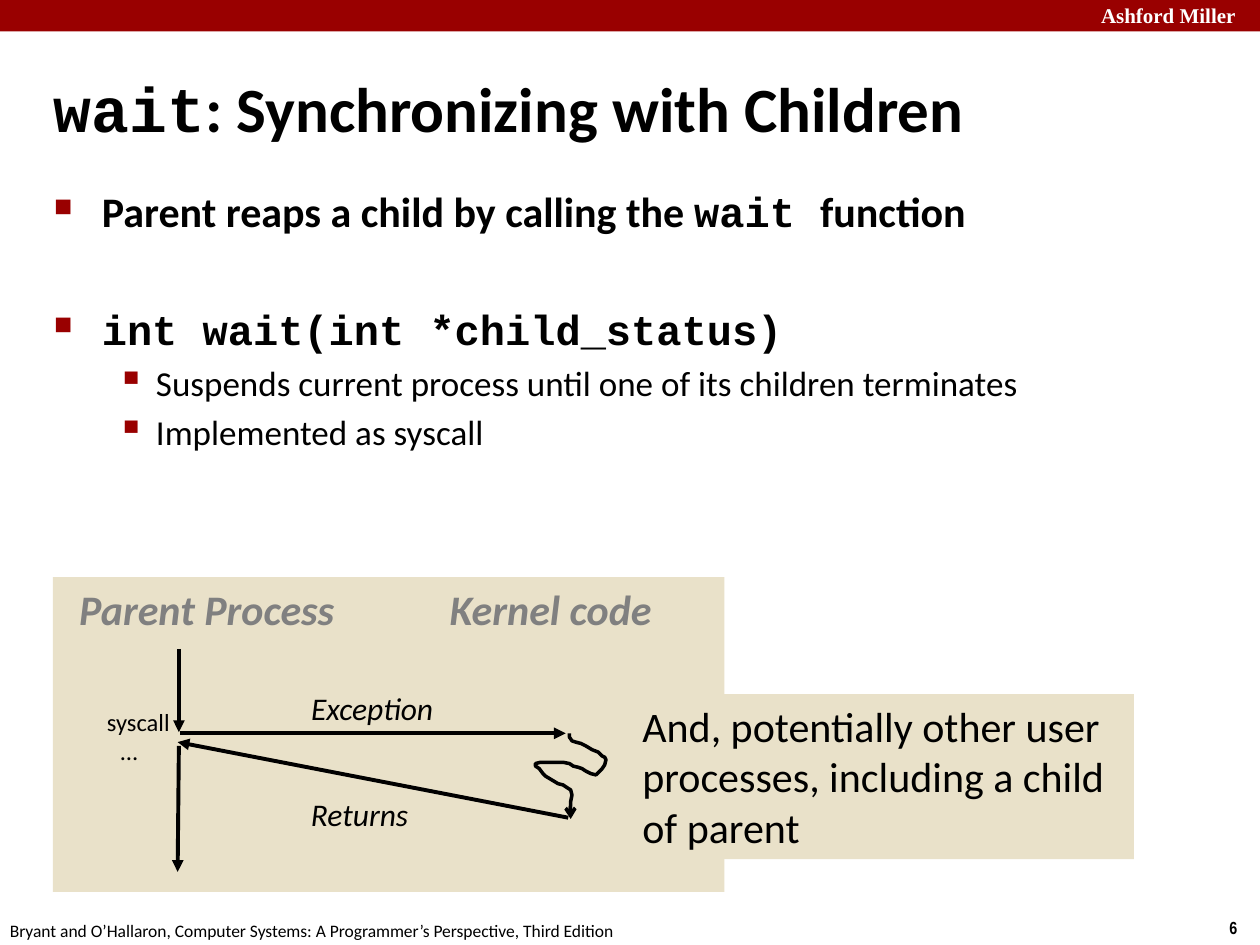
"""Build a slide on how wait synchronizes a parent process with its children."""
from dataclasses import dataclass, field

from lxml.etree import SubElement
from pptx import Presentation
from pptx.dml.color import RGBColor
from pptx.enum.shapes import MSO_CONNECTOR as Connector, MSO_SHAPE as Preset
from pptx.enum.text import MSO_ANCHOR as Anchor, PP_ALIGN as Align
from pptx.oxml.ns import qn
from pptx.util import Inches, Pt

BLACK = RGBColor(0x00, 0x00, 0x00)
WHITE = RGBColor(0xFF, 0xFF, 0xFF)
GRAY = RGBColor(0x80, 0x80, 0x80)
RED = RGBColor(0x99, 0x00, 0x00)
SAND = RGBColor(0xE9, 0xE1, 0xC9)

SANS, CODE = "Calibri", "Courier New"
TITLE = {"name": SANS, "size": Pt(36), "bold": True}
POINT = {"name": SANS, "size": Pt(24), "bold": True}
DETAIL = {"name": SANS, "size": Pt(20), "bold": False}
HEADING = {**POINT, "italic": True}
NOTE = {"name": SANS, "size": Pt(24)}
LABEL = {"name": SANS, "size": Pt(18), "italic": True}
STEP = {"name": SANS, "size": Pt(14)}
FOOTER = {"name": SANS, "size": Pt(10)}
PAGE_NUMBER = {"name": "Arial Narrow", "size": Pt(10), "bold": True}
SCHOOL = {"name": "Times New Roman", "size": Pt(12), "bold": True}


@dataclass
class Span:
    text: str
    style: dict
    color: RGBColor = BLACK


@dataclass
class Bullet:
    symbol: str
    percent: int
    margin: float
    hang: float


@dataclass
class Para:
    spans: list[Span]
    bullet: Bullet | None = None
    before: float = 0


@dataclass
class Box:
    left: float
    top: float
    width: float
    height: float
    paras: list[Para] = field(default_factory=list)
    wrap: bool = False
    anchor: Anchor = Anchor.TOP


@dataclass
class Arrow:
    start: tuple[float, float]
    end: tuple[float, float]


def plain(left: float, top: float, width: float, height: float, text: str,
          style: dict, color: RGBColor = BLACK, wrap: bool = False) -> Box:
    """Describe a box holding a single run of text."""
    return Box(left, top, width, height, [Para([Span(text, style, color)])], wrap)


MAIN = Bullet("■", 60, 0.38, 0.38)
SUB = Bullet("▪", 110, 0.81, 0.31)

TEXTS = [
    plain(8.64, -0.03, 1.43, 0.3, "Ashford Miller", SCHOOL, WHITE, True),
    plain(9.66, 7.23, 0.34, 0.27, "6", PAGE_NUMBER),
    plain(-0.02, 7.25, 5.08, 0.27,
          "Bryant and O’Hallaron, Computer Systems: A Programmer’s Perspective, Third Edition",
          FOOTER),
    Box(0.33, 0.54, 9.08, 0.63, [Para([
        Span("wait", {**TITLE, "name": CODE}),
        Span(": Synchronizing with Children", TITLE),
    ])], True, Anchor.MIDDLE),
    Box(0.33, 1.42, 9.03, 2.42, [
        Para([Span("Parent reaps a child by calling the ", POINT),
              Span("wait ", {**POINT, "name": CODE}),
              Span("function", POINT)], MAIN),
        Para([Span("int wait(int *child_status)", {**POINT, "name": CODE})], MAIN, 39),
        Para([Span("Suspends current process until one of its children terminates", DETAIL)],
             SUB, 4),
        Para([Span("Implemented as syscall", DETAIL)], SUB, 4),
    ], True),
    plain(0.53, 4.58, 2.24, 0.5, "Parent Process", HEADING, GRAY),
    plain(3.47, 4.58, 1.95, 0.5, "Kernel code", HEADING, GRAY),
    plain(2.37, 5.42, 1.25, 0.4, "Exception", LABEL),
    plain(2.37, 6.26, 1, 0.4, "Returns", LABEL),
    plain(0.75, 5.56, 0.71, 0.34, "syscall", STEP),
    plain(0.86, 5.79, 0.35, 0.34, "…", STEP),
]
SIDE_NOTE = plain(5, 5.51, 4, 1.31,
                  "And, potentially other user processes, including a child of parent",
                  NOTE, wrap=True)
ARROWS = [
    Arrow((1.42, 5.15), (1.42, 5.81)),
    Arrow((1.43, 5.82), (4.49, 5.82)),
    Arrow((4.51, 6.49), (1.41, 5.89)),
    Arrow((1.42, 5.92), (1.41, 6.92)),
]
KERNEL_PATH = [
    (4.52, 5.82), (4.52, 5.85), (4.54, 5.88), (4.57, 5.89), (4.61, 5.9), (4.65, 5.92),
    (4.7, 5.95), (4.75, 5.97), (4.78, 6), (4.8, 6.01), (4.81, 6.03), (4.8, 6.07),
    (4.78, 6.1), (4.75, 6.13), (4.73, 6.15), (4.69, 6.14), (4.65, 6.12), (4.62, 6.1),
    (4.59, 6.09), (4.55, 6.08), (4.52, 6.06), (4.47, 6.05), (4.41, 6.05), (4.29, 6.05),
    (4.25, 6.06), (4.25, 6.08), (4.28, 6.1), (4.31, 6.14), (4.33, 6.16), (4.38, 6.19),
    (4.43, 6.22), (4.47, 6.23), (4.5, 6.25), (4.53, 6.27), (4.54, 6.31), (4.53, 6.36),
    (4.53, 6.39), (4.52, 6.44), (4.53, 6.5),
]


def add_bullet(para, bullet: Bullet) -> None:
    """Give a paragraph a hanging red bullet."""
    props = para._p.get_or_add_pPr()
    props.set("marL", str(Inches(bullet.margin)))
    props.set("indent", str(-Inches(bullet.hang)))
    color = SubElement(props, qn("a:buClr"))
    SubElement(color, qn("a:srgbClr"), val=str(RED))
    SubElement(props, qn("a:buSzPct"), val=str(bullet.percent * 1000))
    SubElement(props, qn("a:buChar"), char=bullet.symbol)


def write(shape, box: Box) -> None:
    """Fill a shape with the paragraphs of a box."""
    frame = shape.text_frame
    frame.word_wrap = box.wrap
    frame.vertical_anchor = box.anchor
    for index, item in enumerate(box.paras):
        para = frame.add_paragraph() if index else frame.paragraphs[0]
        para.alignment = Align.LEFT
        para.space_before = Pt(item.before)
        if item.bullet:
            add_bullet(para, item.bullet)
        for span in item.spans:
            run = para.add_run()
            run.text = span.text
            for name, value in span.style.items():
                setattr(run.font, name, value)
            run.font.color.rgb = span.color


def place(box: Box) -> list[int]:
    """Return the position and size of a box as lengths."""
    return [Inches(value) for value in (box.left, box.top, box.width, box.height)]


def add_text(page, box: Box) -> None:
    """Add a text box."""
    write(page.shapes.add_textbox(*place(box)), box)


def add_panel(page, box: Box, color: RGBColor) -> None:
    """Add a filled rectangle with any text it holds."""
    panel = page.shapes.add_shape(Preset.RECTANGLE, *place(box))
    panel.shadow.inherit = False
    panel.fill.solid()
    panel.fill.fore_color.rgb = color
    panel.line.fill.background()
    write(panel, box)


def style_arrow(shape, width: float, head: str) -> None:
    """Draw a line in black and point its far end."""
    shape.line.color.rgb = BLACK
    shape.line.width = Pt(width)
    props = shape._element.spPr
    SubElement(props.find(qn("a:ln")), qn("a:tailEnd"), type=head)
    SubElement(props, qn("a:effectLst"))


def add_arrow(page, arrow: Arrow) -> None:
    """Add a straight arrow."""
    ends = [Inches(value) for value in (*arrow.start, *arrow.end)]
    style_arrow(page.shapes.add_connector(Connector.STRAIGHT, *ends), 2.25, "triangle")


def add_curve(page, points: list[tuple[float, float]]) -> None:
    """Add an open winding path with an arrowhead."""
    first, *rest = [(Inches(x), Inches(y)) for x, y in points]
    builder = page.shapes.build_freeform(*first)
    builder.add_line_segments(rest, close=False)
    curve = builder.convert_to_shape()
    curve.fill.background()
    style_arrow(curve, 2, "arrow")


def main() -> None:
    """Build and save the deck."""
    deck = Presentation()
    deck.slide_width, deck.slide_height = Inches(10), Inches(7.5)
    page = deck.slides.add_slide(deck.slide_layouts[6])
    add_panel(page, Box(0, 0, 10, 0.25), RED)
    add_panel(page, Box(0.42, 4.58, 5.33, 2.5), SAND)
    for box in TEXTS:
        add_text(page, box)
    for arrow in ARROWS:
        add_arrow(page, arrow)
    add_curve(page, KERNEL_PATH)
    add_panel(page, SIDE_NOTE, SAND)
    deck.save("out.pptx")


if __name__ == "__main__":
    main()
